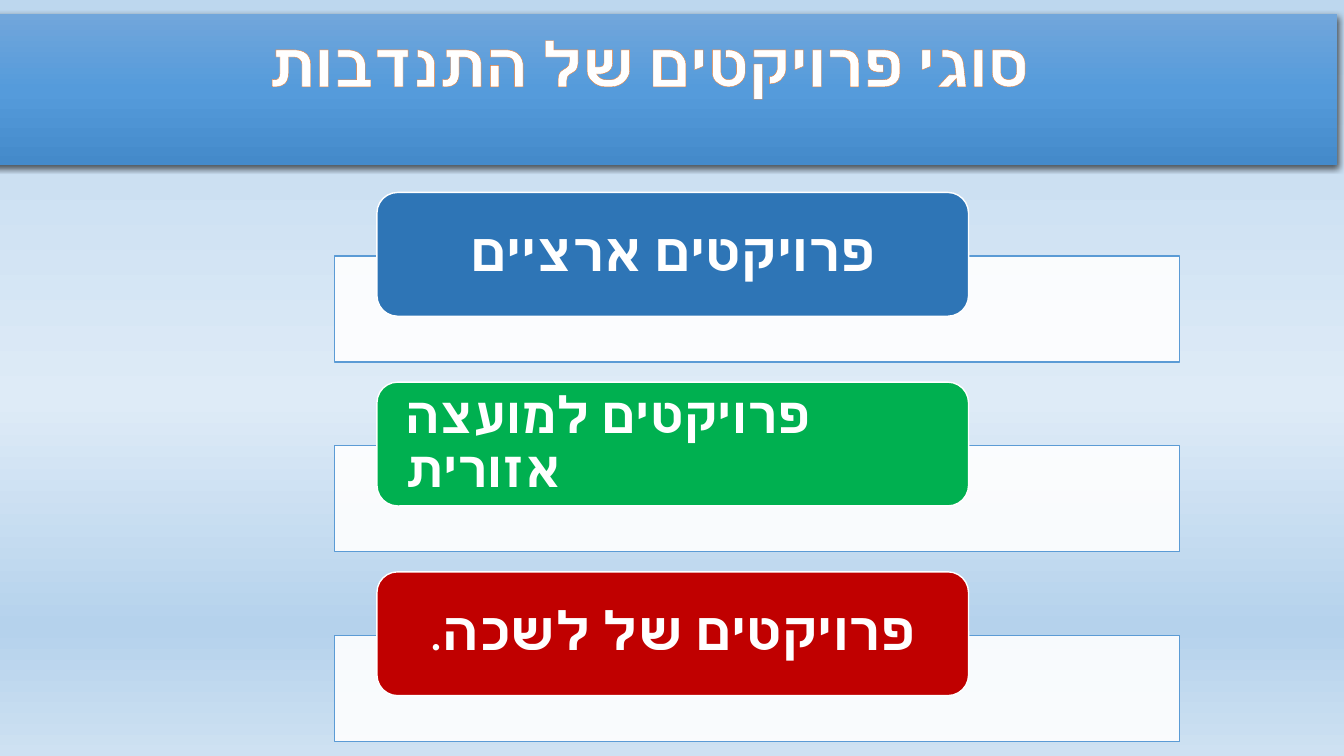
"""Build a Hebrew slide listing three kinds of volunteering projects."""
from dataclasses import dataclass

from lxml.etree import SubElement
from pptx import Presentation
from pptx.dml.color import RGBColor
from pptx.enum.shapes import MSO_SHAPE
from pptx.enum.text import MSO_ANCHOR, MSO_AUTO_SIZE, PP_ALIGN
from pptx.oxml.ns import qn
from pptx.util import Cm, Pt

TITLE = "סוגי פרויקטים של התנדבות"
PROJECTS = [
    {"runs": [("פרויקטים ארציים", True)], "fill": "2E75B6", "size": 38, "align": PP_ALIGN.CENTER},
    {"runs": [("פרויקטים למועצה אזורית", True)], "fill": "00B050", "size": 36, "align": PP_ALIGN.LEFT},
    {"runs": [("פרויקטים של לשכה", True), (".", False)], "fill": "C00000", "size": 38, "align": PP_ALIGN.CENTER},
]


@dataclass(frozen=True)
class Theme:
    font: str = "Calibri"
    title_size: int = 44
    white: str = "FFFFFF"
    bar_line: str = "5B9BD5"
    title_outline: str = "ED7D31"
    shadow: str = "000000"
    background: tuple = ((0, "BDD7EE"), (53, "DEEBF7"), (83, "B5D2EC"), (100, "CEE1F2"))
    band: tuple = ((0, "71A6DB"), (50, "559BDB"), (100, "448ACA"))


THEME = Theme()
SLIDE_SIZE = (33.87, 19.05)
BAND = (-0.18, 0.36, 33.87, 3.81)
TITLE_BOX = (3.68, 0.51, 25.35, 2.13)
BAR_LEFT, BAR_WIDTH, BAR_HEIGHT = 8.43, 21.29, 2.67
LABEL_LEFT, LABEL_WIDTH, LABEL_HEIGHT = 9.5, 14.91, 3.12
FIRST_TOP, PITCH, BAR_DROP = 4.85, 4.78, 1.6
LABEL_INSET = 0.56


def add_color(parent, color, alpha=None):
    node = SubElement(parent, qn("a:srgbClr"), val=color)
    if alpha is not None:
        SubElement(node, qn("a:alpha"), val=str(alpha * 1000))


def set_gradient(fill, element, stops):
    fill.gradient()
    fill.gradient_angle = 270
    stop_list = next(element.iter(qn("a:gsLst")))
    stop_list.clear()
    for position, color in stops:
        add_color(SubElement(stop_list, qn("a:gs"), pos=str(position * 1000)), color)


def add_block(page, kind, frame, fill=None, line=None):
    shape = page.shapes.add_shape(kind, *map(Cm, frame))
    shape.shadow.inherit = False
    if fill:
        shape.fill.solid()
        shape.fill.fore_color.rgb = RGBColor.from_string(fill)
    if line:
        shape.line.color.rgb = RGBColor.from_string(line)
        shape.line.width = Pt(1)
    else:
        shape.line.fill.background()
    return shape


def format_para(para, align, size):
    para.alignment = align
    para._p.get_or_add_pPr().set("rtl", "1")
    for span in para.runs:
        span.font.name = THEME.font
        span.font.size = Pt(size)
        span.font.bold = True
        span.font.color.rgb = RGBColor.from_string(THEME.white)
        SubElement(span.font._element, qn("a:cs"), typeface=THEME.font)


def add_title(page):
    title = page.shapes.title
    title.left, title.top, title.width, title.height = map(Cm, TITLE_BOX)
    frame = title.text_frame
    frame.text = TITLE
    frame.word_wrap = True
    frame.vertical_anchor = MSO_ANCHOR.TOP
    frame.auto_size = MSO_AUTO_SIZE.SHAPE_TO_FIT_TEXT
    format_para(frame.paragraphs[0], PP_ALIGN.CENTER, THEME.title_size)
    properties = frame.paragraphs[0].runs[0].font._element
    outline = SubElement(properties, qn("a:ln"), w=str(Pt(0.52)))
    add_color(SubElement(outline, qn("a:solidFill")), THEME.title_outline)
    properties.insert(0, outline)


def add_band(page):
    band = add_block(page, MSO_SHAPE.RECTANGLE, BAND)
    set_gradient(band.fill, band.element, THEME.band)
    effects = next(band.element.iter(qn("a:effectLst")))
    shadow = SubElement(effects, qn("a:outerShdw"), blurRad=str(Pt(4.5)), dist=str(Pt(1.5)),
                        dir="5400000", algn="ctr", rotWithShape="0")
    add_color(shadow, THEME.shadow, 63)
    page.shapes.title.element.addprevious(band.element)


def add_project(page, project, top):
    bar = add_block(page, MSO_SHAPE.RECTANGLE, (BAR_LEFT, top + BAR_DROP, BAR_WIDTH, BAR_HEIGHT),
                    THEME.white, THEME.bar_line)
    SubElement(next(bar.element.iter(qn("a:srgbClr"))), qn("a:alpha"), val="90000")
    label = add_block(page, MSO_SHAPE.ROUNDED_RECTANGLE, (LABEL_LEFT, top, LABEL_WIDTH, LABEL_HEIGHT),
                      project["fill"], THEME.white)
    frame = label.text_frame
    frame.word_wrap = True
    frame.vertical_anchor = MSO_ANCHOR.MIDDLE
    frame.margin_left = frame.margin_right = Cm(LABEL_INSET)
    frame.margin_top = frame.margin_bottom = 0
    para = frame.paragraphs[0]
    para.line_spacing = 0.9
    for text, _ in project["runs"]:
        para.add_run().text = text
    format_para(para, project["align"], project["size"])
    for span, (_, bold) in zip(para.runs, project["runs"]):
        span.font.bold = bold


def main():
    deck = Presentation()
    deck.slide_width, deck.slide_height = map(Cm, SLIDE_SIZE)
    page = deck.slides.add_slide(deck.slide_layouts[5])
    set_gradient(page.background.fill, page.element, THEME.background)
    add_title(page)
    add_band(page)
    for index, project in enumerate(PROJECTS):
        add_project(page, project, FIRST_TOP + index * PITCH)
    deck.save("out.pptx")


if __name__ == "__main__":
    main()
